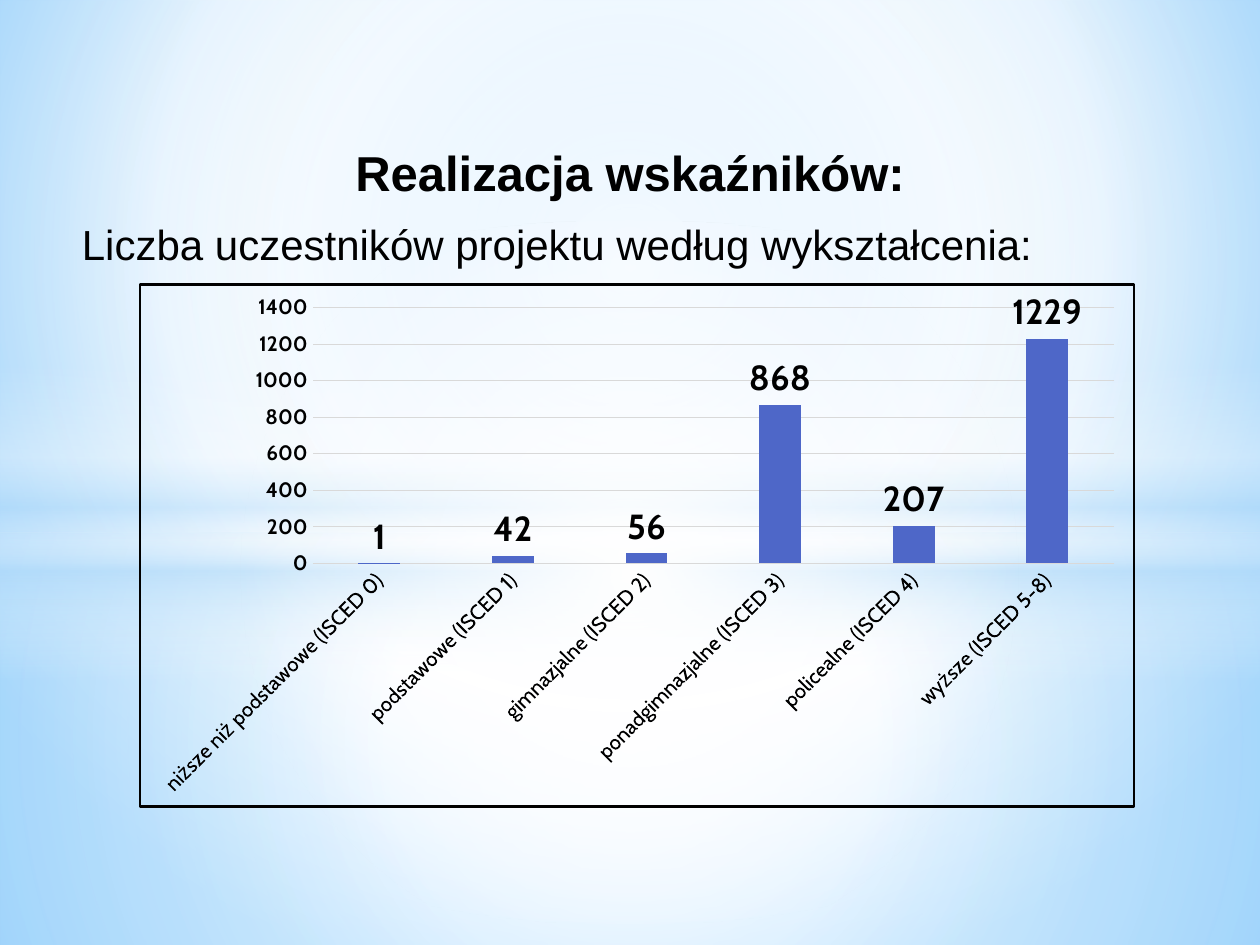
from lxml import etree
from pptx import Presentation
from pptx import util as u
from pptx.chart.data import CategoryChartData
from pptx.dml.color import RGBColor
from pptx.enum import chart as ch, shapes, text
from pptx.oxml import parse_xml
from pptx.oxml.ns import nsdecls, qn

COLORS = {"black": "000000", "white": "FFFFFF", "sky": "9ED5FF", "azure": "5BB9FF",
          "mist": "B4DCFA", "grid": "D9D9D9", "bar": "4E67C8"}

TITLE = "Realizacja wskaźników:"
SUBTITLE = "Liczba uczestników projektu według wykształcenia:"
PARTICIPANTS = [
    ("niższe niż podstawowe (ISCED 0)", 1),
    ("podstawowe (ISCED 1)", 42),
    ("gimnazjalne (ISCED 2)", 56),
    ("ponadgimnazjalne (ISCED 3)", 868),
    ("policealne (ISCED 4)", 207),
    ("wyższe (ISCED 5-8)", 1229),
]

# Gradient stops are (position %, colour, opacity %).
BACKGROUND = [(0, "sky", 100), (60, "white", 100), (100, "azure", 100)]
CENTRE = (50, 50, 50, 50)
RECTANGLE, OVAL = shapes.MSO_SHAPE.RECTANGLE, shapes.MSO_SHAPE.OVAL
GLOWS = [  # preset, (left, top, width, height), stops, focus (None means top to bottom)
    (RECTANGLE, (0, 4.23, 10, 3.27),
     [(0, "white", 91), (37, "white", 76), (100, "mist", 79)], CENTRE),
    (RECTANGLE, (0, 0, 10, 4.23),
     [(0, "white", 89), (48, "white", 62), (100, "mist", 79)], CENTRE),
    (RECTANGLE, (0, 2.9, 10, 2.5),
     [(0, "white", 0), (29, "white", 30), (45, "mist", 40), (55, "white", 26),
      (65, "mist", 60), (100, "white", 0)], None),
    (OVAL, (0, 1.75, 10, 5.58), [(0, "white", 100), (54, "white", 0)], CENTRE),
]


def rgb(name):
    return RGBColor.from_string(COLORS[name])


def inches(box):
    return [u.Inches(length) for length in box]


def set_gradient(fill, element, stops, focus):
    """Fill with a gradient; element is the XML that holds the fill."""
    fill.solid()
    fill.fore_color.rgb = rgb("white")
    stop_xml = "".join(
        f'<a:gs pos="{position * 1000}"><a:srgbClr val="{COLORS[color]}">'
        f'<a:alpha val="{opacity * 1000}"/></a:srgbClr></a:gs>'
        for position, color, opacity in stops)
    if focus:
        sides = " ".join(f'{side}="{value * 1000}"' for side, value in zip("ltrb", focus))
        direction = f'<a:path path="circle"><a:fillToRect {sides}/></a:path>'
    else:
        direction = '<a:lin ang="5400000" scaled="0"/>'
    solid = element.find(".//" + qn("a:solidFill"))
    solid.getparent().replace(solid, parse_xml(
        f'<a:gradFill {nsdecls("a")} rotWithShape="1"><a:gsLst>{stop_xml}</a:gsLst>'
        f'{direction}</a:gradFill>'))


def set_font(font, size, bold=False, name="Cabin"):
    font.name, font.size, font.bold = name, u.Pt(size), bold
    font.color.rgb = rgb("black")


def add_glows(slide):
    for preset, box, stops, focus in GLOWS:
        shape = slide.shapes.add_shape(preset, *inches(box))
        shape.shadow.inherit = False
        shape.line.fill.background()
        set_gradient(shape.fill, shape._element.spPr, stops, focus)


def add_heading(slide):
    title = slide.shapes.title
    title.left, title.top, title.width, title.height = inches((0.55, 1.08, 8.9, 1.13))
    slide.shapes._spTree.append(title._element)  # in front of the glows
    frame = title.text_frame
    frame.word_wrap = True
    frame.auto_size = text.MSO_AUTO_SIZE.SHAPE_TO_FIT_TEXT
    frame.vertical_anchor = text.MSO_ANCHOR.TOP
    lines = [(TITLE, 28, True, text.PP_ALIGN.CENTER, 0),
             (SUBTITLE, 24, False, text.PP_ALIGN.LEFT, 10)]
    for index, (words, size, bold, alignment, space) in enumerate(lines):
        paragraph = frame.add_paragraph() if index else frame.paragraphs[0]
        paragraph.alignment = alignment
        paragraph.space_before = u.Pt(space)
        run = paragraph.add_run()
        run.text = words
        set_font(run.font, size, bold, "Arial")


def add_participants_chart(slide):
    data = CategoryChartData()
    data.categories = [level for level, _ in PARTICIPANTS]
    data.add_series("Series 1", [count for _, count in PARTICIPANTS])
    chart = slide.shapes.add_chart(ch.XL_CHART_TYPE.COLUMN_CLUSTERED,
                                   *inches((1.1, 2.25, 7.91, 4.16)), data).chart
    chart.has_legend = chart.has_title = False
    set_font(chart.font, 10)

    plot = chart.plots[0]
    plot.vary_by_categories = False
    plot.gap_width, plot.overlap = 219, -27
    series = plot.series[0]
    series.format.fill.solid()
    series.format.fill.fore_color.rgb = rgb("bar")
    labels = series.data_labels
    labels.show_value = True
    labels.position = ch.XL_LABEL_POSITION.OUTSIDE_END
    set_font(labels.font, 20, True)

    levels, counts = chart.category_axis, chart.value_axis
    for axis, bold in ((levels, False), (counts, True)):
        axis.major_tick_mark = axis.minor_tick_mark = ch.XL_TICK_MARK.NONE
        set_font(axis.tick_labels.font, 12, bold)
    levels._element.find(qn("c:txPr")).find(qn("a:bodyPr")).set("rot", "-2700000")
    counts.format.line.fill.background()
    counts.has_major_gridlines = True
    for line in (levels.format.line, counts.major_gridlines.format.line):
        line.color.rgb = rgb("grid")
        line.width = u.Pt(0.75)

    frame_xml = parse_xml(
        f'<c:spPr {nsdecls("c", "a")}><a:noFill/><a:ln w="{u.Pt(1.5)}"><a:solidFill>'
        f'<a:srgbClr val="{COLORS["black"]}"/></a:solidFill></a:ln></c:spPr>')
    chart._chartSpace.find(qn("c:chart")).addnext(frame_xml)


def main():
    presentation = Presentation()
    presentation.slide_width, presentation.slide_height = inches((10, 7.5))
    slide = presentation.slides.add_slide(presentation.slide_layouts[5])
    set_gradient(slide.background.fill, slide._element, BACKGROUND, (20, 10, 20, 60))
    add_glows(slide)
    add_heading(slide)
    add_participants_chart(slide)
    presentation.save("out.pptx")


if __name__ == "__main__":
    main()
